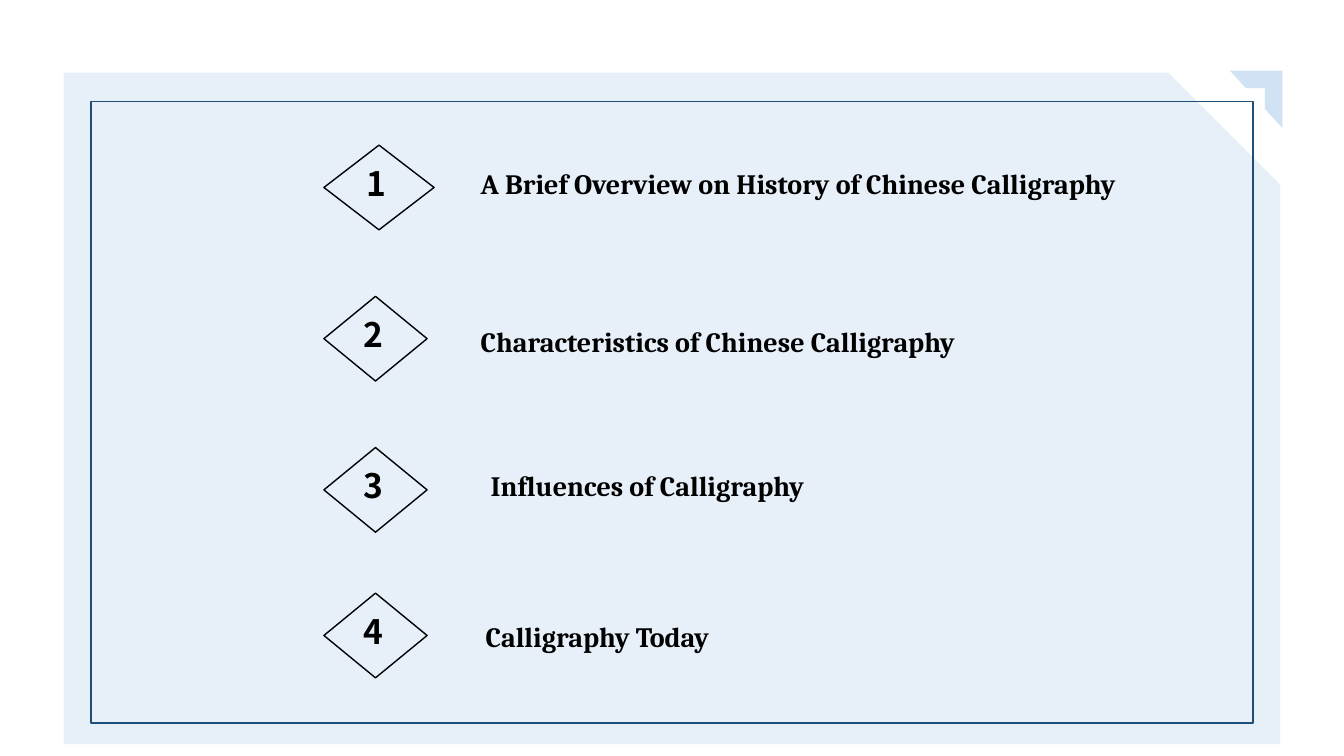
from lxml.etree import SubElement
from pptx import Presentation
from pptx.dml.color import RGBColor
from pptx.enum.shapes import MSO_SHAPE
from pptx.enum.text import MSO_ANCHOR, PP_ALIGN
from pptx.oxml.ns import qn
from pptx.util import Pt

PALE_BLUE = RGBColor(0xDE, 0xEB, 0xF7)
LIGHT_BLUE = RGBColor(0xBD, 0xD7, 0xEE)
NAVY = RGBColor(0x1F, 0x4E, 0x79)
BLACK = RGBColor(0, 0, 0)

presentation = Presentation()
presentation.slide_width = Pt(960)
presentation.slide_height = Pt(540)
slide = presentation.slides.add_slide(presentation.slide_layouts[6])


def add_figure(kind, left, top, width, height, fill=None, line=None):
    figure = slide.shapes.add_shape(kind, Pt(left), Pt(top), Pt(width), Pt(height))
    figure.shadow.inherit = False
    if fill is None:
        figure.fill.background()
    else:
        figure.fill.solid()
        figure.fill.fore_color.rgb = fill
        color = figure._element.spPr.find(qn("a:solidFill"))[0]
        SubElement(color, qn("a:alpha"), val="70000")
    if line is None:
        figure.line.fill.background()
    else:
        figure.line.color.rgb = line
        figure.line.width = Pt(1)
    return figure


def add_text(text, left, top, width, height, *, font, size, anchor,
             align=PP_ALIGN.LEFT, spacing=1.0):
    box = slide.shapes.add_textbox(Pt(left), Pt(top), Pt(width), Pt(height))
    frame = box.text_frame
    frame.word_wrap = True
    frame.vertical_anchor = anchor
    paragraph = frame.paragraphs[0]
    paragraph.alignment = align
    paragraph.line_spacing = spacing
    run = paragraph.add_run()
    run.text = text
    run.font.name = font
    run.font.size = Pt(size)
    run.font.bold = True
    run.font.color.rgb = BLACK
    # East Asian face follows the Latin one
    SubElement(run.font._element, qn("a:ea"), typeface=font)


# Background panel, frame and corner ornament
add_figure(MSO_SHAPE.SNIP_1_RECTANGLE, 45.5, 52, 869, 479.5, fill=PALE_BLUE)
add_figure(MSO_SHAPE.RECTANGLE, 65, 72.5, 830, 444, line=NAVY)
corner = add_figure(MSO_SHAPE.HALF_FRAME, 878.5, 50.5, 37.5, 41, fill=LIGHT_BLUE)
corner._element.spPr.find(qn("a:xfrm")).set("flipH", "1")

# Contents: title, diamond top, diamond width, title left, top, height, spacing
sections = [
    ("A Brief Overview on History of Chinese Calligraphy", 103.7, 78.7, 336.2, 111.6, 33.8, 1.2),
    ("Characteristics of Chinese Calligraphy", 211.7, 73.7, 336.2, 224.6, 33.8, 1.2),
    ("Influences of Calligraphy", 319.7, 73.7, 343.4, 330.5, 31.7, 1.0),
    ("Calligraphy Today", 423.7, 73.7, 339.8, 438.5, 31.7, 1.0),
]
DIAMOND_LEFT = 231.4
for number, (title, top, width, title_left, title_top, title_height, spacing) in enumerate(sections, 1):
    add_text(str(number), DIAMOND_LEFT + 6.5, top + 8.7, width * 0.79, 36,
             font="Noto Sans CJK SC", size=24, anchor=MSO_ANCHOR.BOTTOM,
             align=PP_ALIGN.CENTER)
    add_figure(MSO_SHAPE.DIAMOND, DIAMOND_LEFT, top, width, 60.5, line=BLACK)
    add_text(title, title_left, title_top, 481, title_height,
             font="Cambria", size=20, anchor=MSO_ANCHOR.MIDDLE, spacing=spacing)

presentation.save("out.pptx")
